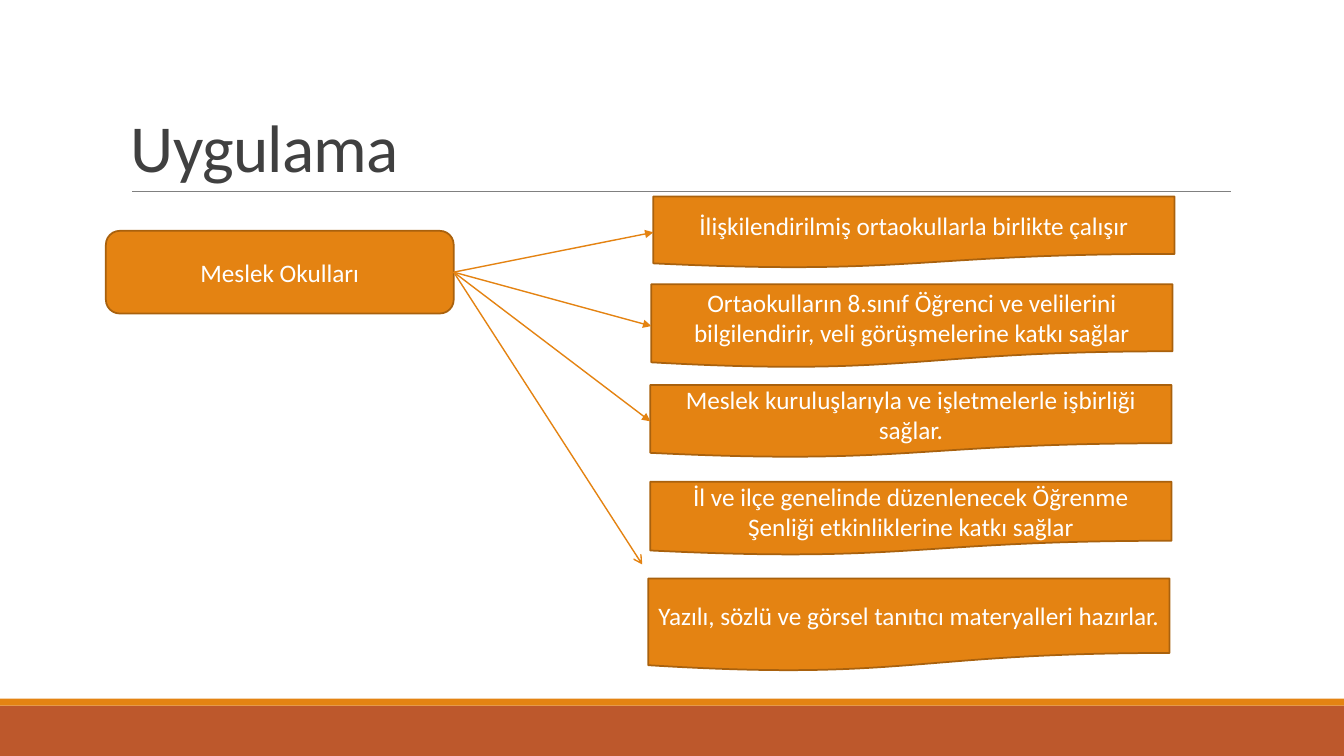
from dataclasses import dataclass
from lxml import etree
from pptx import Presentation
from pptx import util as u
from pptx.dml.color import RGBColor
from pptx.enum import shapes as s, text as t
from pptx.oxml.ns import qn


@dataclass(frozen=True)
class Theme:
    """Colours, font and type sizes of the slide."""
    orange: str = "E48312"
    rust: str = "BD582C"
    edge: str = "A9610D"
    rule: str = "808080"
    ink: str = "404040"
    white: str = "FFFFFF"
    font: str = "Calibri"
    head: int = 48
    body: int = 18


THEME = Theme()
WIDE, HIGH = 13.33, 7.5
TASKS = [
    (6.48, 1.95, 0.71, "İlişkilendirilmiş ortaokullarla birlikte çalışır"),
    (6.46, 2.82, 0.83, "Ortaokulların 8.sınıf Öğrenci ve velilerini "
                       "bilgilendirir, veli görüşmelerine katkı sağlar"),
    (6.45, 3.82, 0.72, "Meslek kuruluşlarıyla ve işletmelerle işbirliği sağlar."),
    (6.45, 4.78, 0.73, "İl ve ilçe genelinde düzenlenecek Öğrenme "
                       "Şenliği etkinliklerine katkı sağlar"),
    (6.43, 5.74, 0.92, "Yazılı, sözlü ve görsel tanıtıcı materyalleri hazırlar."),
]


def assign(item, form):
    """Set each attribute named in a dict of format values."""
    for key, value in form.items():
        setattr(item, key, value)


def write(shape, words, size, color, anchor, align):
    """Put one styled paragraph in a shape and return it."""
    frame = shape.text_frame
    assign(frame, {"word_wrap": True, "vertical_anchor": anchor})
    para = frame.paragraphs[0]
    para.alignment = align
    run = para.add_run()
    run.text = words
    assign(run.font, {"name": THEME.font, "size": u.Pt(size)})
    run.font.color.rgb = RGBColor.from_string(color)
    return para


def block(slide, kind, box, fill, edge=None):
    """Add a flat filled shape, outlined if an edge colour is given."""
    shape = slide.shapes.add_shape(kind, *map(u.Inches, box))
    shape.shadow.inherit = False
    shape.fill.solid()
    shape.fill.fore_color.rgb = RGBColor.from_string(fill)
    if edge:
        shape.line.color.rgb = RGBColor.from_string(edge)
        shape.line.width = u.Pt(1.25)
    else:
        shape.line.fill.background()
    return shape


def card(slide, kind, box, words):
    """Add an orange shape with centred white text."""
    shape = block(slide, kind, box, THEME.orange, THEME.edge)
    write(shape, words, THEME.body, THEME.white,
          t.MSO_ANCHOR.MIDDLE, t.PP_ALIGN.CENTER)
    return shape


def stroke(slide, start, end, color, width, tip=None):
    """Add a straight line, with an arrowhead at its end if asked."""
    line = slide.shapes.add_connector(
        s.MSO_CONNECTOR.STRAIGHT, *map(u.Inches, start + end))
    line.line.color.rgb = RGBColor.from_string(color)
    line.line.width = u.Pt(width)
    if tip:
        etree.SubElement(line.line._get_or_add_ln(), qn("a:tailEnd"), type=tip)
    etree.SubElement(line._element.spPr, qn("a:effectLst"))
    return line


def footer(slide, box):
    """Draw the rust band with its thin orange strip on top."""
    left, top, width, height = box
    strip = height / 8
    rect = s.MSO_SHAPE.RECTANGLE
    block(slide, rect, (left, top + strip, width, height - strip), THEME.rust)
    block(slide, rect, (left, top, width, strip), THEME.orange)


def header(slide, box, words):
    """Draw the title standing on its rule."""
    left, top, width, height = box
    base = top + height
    stroke(slide, (left + 0.11, base), (left + width + 0.01, base), THEME.rule, 0.5)
    title = slide.shapes.add_textbox(*map(u.Inches, box))
    para = write(title, words, THEME.head, THEME.ink,
                 t.MSO_ANCHOR.BOTTOM, t.PP_ALIGN.LEFT)
    para.line_spacing = 0.85
    para.runs[0].font._element.set("spc", "-50")


def fan(slide, box, words, tasks):
    """Draw the source box, its tasks and the arrows that link them."""
    left, top, width, height = box
    hub = card(slide, s.MSO_SHAPE.ROUNDED_RECTANGLE, box, words)
    start = (left + width, top + height / 2)
    notes = [card(slide, s.MSO_SHAPE.FLOWCHART_DOCUMENT, (x, y, 5.17, tall), label)
             for x, y, tall, label in tasks]
    for note in notes[:3]:
        line = stroke(slide, start, start, THEME.orange, 1, "triangle")
        line.begin_connect(hub, 3)
        line.end_connect(note, 1)
    loose = stroke(slide, start, (6.37, 5.6), THEME.orange, 1, "arrow")
    loose.begin_connect(hub, 3)


def main():
    """Build the slide and save it."""
    deck = Presentation()
    assign(deck, {"slide_width": u.Inches(WIDE), "slide_height": u.Inches(HIGH)})
    slide = deck.slides.add_slide(deck.slide_layouts[6])
    footer(slide, (0, 6.93, WIDE, HIGH - 6.93))
    header(slide, (1.2, 0.31, 11, 1.59), "Uygulama")
    fan(slide, (1.05, 2.29, 3.45, 0.82), "Meslek Okulları", TASKS)
    deck.save("out.pptx")


if __name__ == "__main__":
    main()
